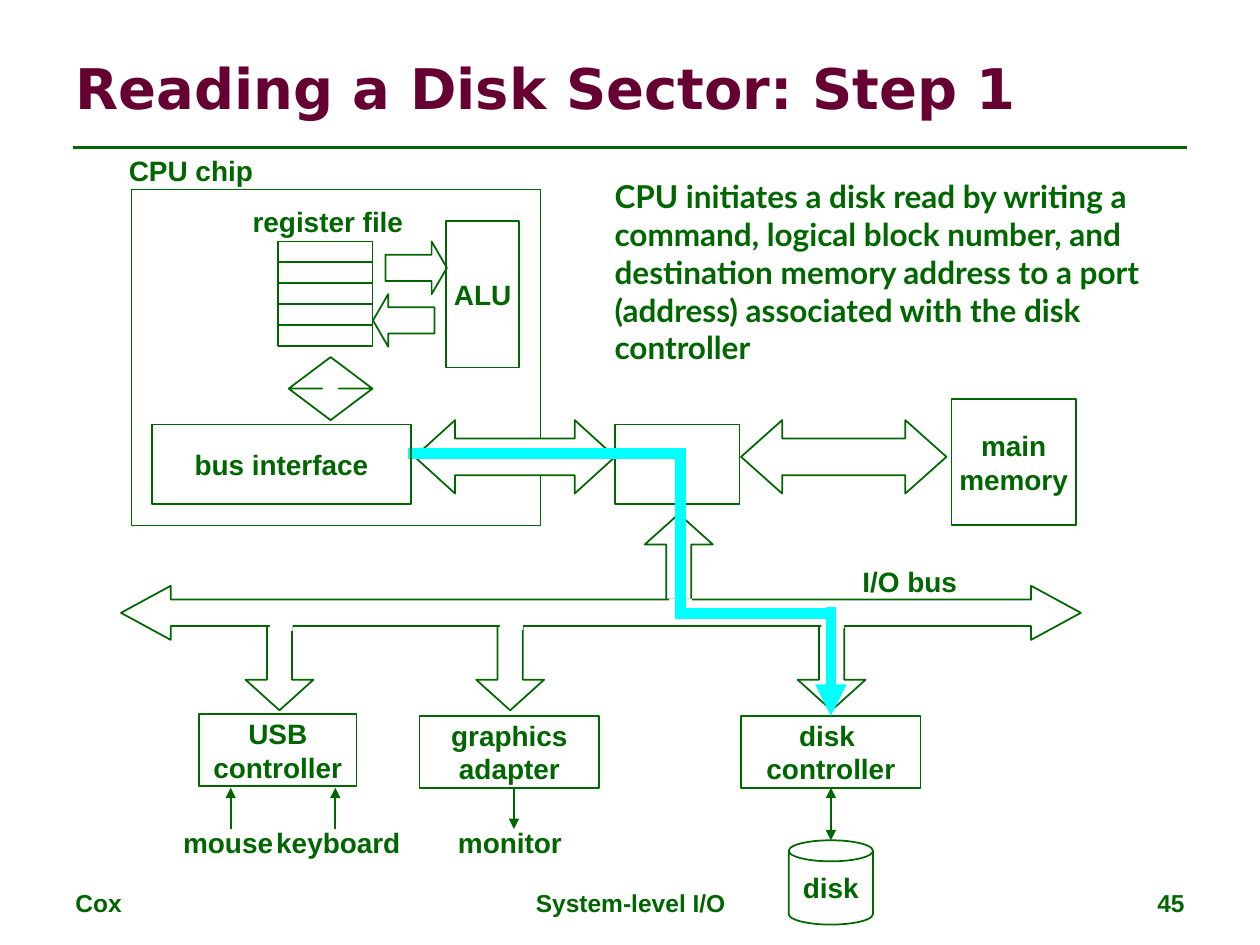
import pptx
import pptx.dml.color
import pptx.enum.shapes
import pptx.enum.text
import pptx.oxml
import pptx.oxml.ns
import pptx.util

Cm = pptx.util.Cm
Pt = pptx.util.Pt
SHAPE = pptx.enum.shapes.MSO_SHAPE
ALIGN = pptx.enum.text.PP_ALIGN
ANCHOR = pptx.enum.text.MSO_ANCHOR

GREEN, MAROON, CYAN, WHITE = "006600", "660033", "00FFFF", "FFFFFF"


def color(hex_value):
    return pptx.dml.color.RGBColor.from_string(hex_value)


def write_text(shape, text, size=16, font="Arial", ink=GREEN,
               align=ALIGN.CENTER, anchor=ANCHOR.MIDDLE, wrap=False):
    frame = shape.text_frame
    frame.word_wrap = wrap
    frame.vertical_anchor = anchor
    frame.text = text
    for paragraph in frame.paragraphs:
        paragraph.alignment = align
        style = paragraph.font
        style.size, style.name, style.bold = Pt(size), font, True
        style.color.rgb = color(ink)


def add_label(slide, text, left, top, width, height=0.94, **text_format):
    label = slide.shapes.add_textbox(Cm(left), Cm(top), Cm(width), Cm(height))
    write_text(label, text, **text_format)


def add_part(slide, kind, left, top, width, height, text="", fill=None,
             line=GREEN, weight=1, adjust=()):
    part = slide.shapes.add_shape(kind, Cm(left), Cm(top), Cm(width), Cm(height))
    part.shadow.inherit = False
    if fill:
        part.fill.solid()
        part.fill.fore_color.rgb = color(fill)
    else:
        part.fill.background()
    if line:
        part.line.color.rgb = color(line)
        part.line.width = Pt(weight)
    else:
        part.line.fill.background()
    for index, value in enumerate(adjust):
        part.adjustments[index] = value
    if text:
        write_text(part, text)
    return part


def add_box(slide, left, top, width, height, text="", **style):
    return add_part(slide, SHAPE.RECTANGLE, left, top, width, height, text, **style)


def add_line(slide, x1, y1, x2, y2, ink=GREEN, weight=1, arrows=()):
    """Draw a line; arrows may hold "headEnd" (start) and "tailEnd" (end)."""
    line = slide.shapes.add_connector(
        pptx.enum.shapes.MSO_CONNECTOR.STRAIGHT, Cm(x1), Cm(y1), Cm(x2), Cm(y2))
    line.line.color.rgb = color(ink)
    line.line.width = Pt(weight)
    for end in arrows:
        arrowhead = pptx.oxml.parse_xml(
            f'<a:{end} {pptx.oxml.ns.nsdecls("a")} type="triangle"/>')
        line.line._get_or_add_ln().append(arrowhead)
    line._element.spPr.append(pptx.oxml.parse_xml(
        f'<a:effectLst {pptx.oxml.ns.nsdecls("a")}/>'))
    return line


def add_frame(slide):
    add_line(slide, 1.47, 2.97, 23.93, 2.97, weight=1.5)
    footers = (("Cox", 1.27, 5.92, ALIGN.LEFT),
               ("System-level I/O", 8.69, 8.05, ALIGN.CENTER),
               ("45", 18.21, 5.92, ALIGN.RIGHT))
    for text, left, width, align in footers:
        add_label(slide, text, left, 17.78, width, 0.89, size=14, align=align,
                  anchor=ANCHOR.TOP, wrap=True)
    add_label(slide, "Reading a Disk Sector: Step 1", 1.27, 0.76, 22.86, 1.98,
              size=32, font="DejaVu Sans", ink=MAROON, align=ALIGN.LEFT, wrap=True)


def add_cpu_and_memory(slide):
    add_box(slide, 2.64, 3.81, 8.26, 6.78, weight=0.25)
    add_label(slide, "CPU chip", 2.34, 2.97, 3.02)

    # Main memory, I/O bridge and the buses between them
    add_box(slide, 19.18, 8.05, 2.51, 2.54, "main\nmemory")
    add_part(slide, SHAPE.LEFT_RIGHT_ARROW, 14.94, 8.47, 4.14, 1.48,
             adjust=(0.5, 0.56))
    add_box(slide, 12.4, 8.56, 2.51, 1.6)
    add_part(slide, SHAPE.LEFT_RIGHT_ARROW, 8.36, 8.47, 4.04, 1.48, fill=WHITE,
             adjust=(0.5, 0.55))

    # Register file and ALU
    register_height = 0.42
    for row in range(5):
        add_box(slide, 5.61, 4.87 + row * register_height, 1.9, register_height)
    add_label(slide, "register file", 4.83, 3.99, 3.56)
    add_part(slide, SHAPE.RIGHT_ARROW, 7.77, 4.87, 1.24, 1.06, adjust=(0.5, 0.29))
    add_part(slide, SHAPE.LEFT_ARROW, 7.52, 5.93, 1.24, 1.06, adjust=(0.5, 0.29))
    add_box(slide, 8.99, 4.45, 1.48, 2.96, "ALU")
    add_part(slide, SHAPE.UP_DOWN_ARROW, 5.82, 7.2, 1.69, 1.27, adjust=(0.5, 0.2))


def add_devices(slide):
    # Branches between the I/O bus, the bridge and the controllers
    branch = dict(width=1.37, height=1.9, adjust=(0.37, 0.45))
    add_part(slide, SHAPE.UP_ARROW, 13, 10.36, **branch)
    for left in (4.95, 9.6, 16.08):
        add_part(slide, SHAPE.DOWN_ARROW, left, 12.42, **branch)

    # Controllers
    add_box(slide, 4.01, 14.4, 3.18, 1.45, "USB\ncontroller")
    add_box(slide, 8.46, 14.43, 3.62, 1.45, "graphics\nadapter")
    disk_controller = add_box(slide, 14.94, 14.43, 3.62, 1.45, "disk \ncontroller")

    # Devices
    devices = (("mouse", 3.43, 2.34, 4.65, "headEnd"),
               ("keyboard", 5.31, 3.02, 6.76, "headEnd"),
               ("monitor", 8.97, 2.62, 10.36, "tailEnd"))
    for text, left, width, line_x, arrow in devices:
        add_line(slide, line_x, 15.88, line_x, 16.71, arrows=[arrow])
        add_label(slide, text, left, 16.51, width)
    disk_link = add_line(slide, 16.75, 15.88, 16.75, 16.94,
                         arrows=["headEnd", "tailEnd"])
    disk_link.begin_connect(disk_controller, 2)
    add_part(slide, SHAPE.CAN, 15.9, 16.94, 1.7, 1.7, "disk", adjust=[0.25])
    return disk_controller


def add_io_bus(slide):
    add_part(slide, SHAPE.LEFT_RIGHT_ARROW, 2.44, 11.81, 19.35, 1.09, fill=WHITE,
             adjust=(0.49, 0.92))
    # White patches open the bus outline at each branch
    for left, top in ((5.44, 12.29), (10.08, 12.27), (16.56, 12.24), (13.49, 12.07)):
        add_box(slide, left, top, 0.46, 0.43, fill=WHITE, line=None)
    add_label(slide, "I/O bus", 17.12, 11.25, 2.44)


def add_command_route(slide, disk_controller):
    route = dict(ink=CYAN, weight=6)
    add_line(slide, 8.23, 9.14, 13.82, 9.14, **route)
    add_line(slide, 13.72, 9.14, 13.72, 12.29, **route)
    add_line(slide, 13.61, 12.37, 16.75, 12.37, **route)
    last_leg = add_line(slide, 16.75, 12.24, 16.75, 14.43, arrows=["tailEnd"], **route)
    last_leg.end_connect(disk_controller, 0)


def main():
    deck = pptx.Presentation()
    deck.slide_width, deck.slide_height = Cm(25.4), Cm(19.05)
    slide = deck.slides.add_slide(deck.slide_layouts[6])

    add_frame(slide)
    add_cpu_and_memory(slide)
    disk_controller = add_devices(slide)
    add_io_bus(slide)
    add_command_route(slide, disk_controller)

    # The bus interface covers the start of the route
    add_box(slide, 3.07, 8.56, 5.21, 1.6, "bus interface")
    add_label(slide, "CPU initiates a disk read by writing a command, logical block "
              "number, and destination memory address to a port (address) "
              "associated with the disk controller", 12.14, 3.45, 12.22, 4.06,
              size=18, font="Lato", align=ALIGN.LEFT, anchor=ANCHOR.TOP, wrap=True)
    deck.save("out.pptx")


if __name__ == "__main__":
    main()
